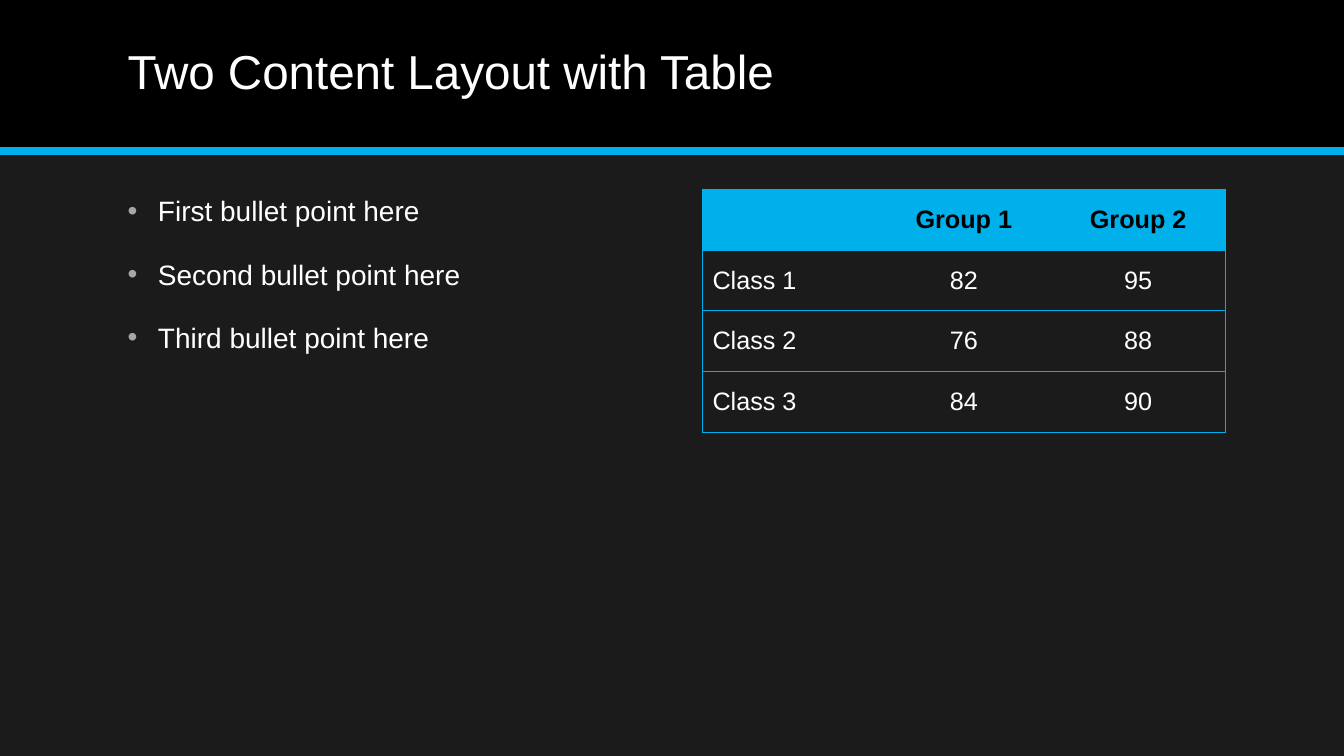
from pptx import Presentation
from pptx.dml.color import RGBColor
from pptx.enum.shapes import MSO_CONNECTOR, MSO_SHAPE
from pptx.enum.text import MSO_ANCHOR, MSO_AUTO_SIZE, PP_ALIGN
from pptx.oxml.ns import qn
from pptx.util import Pt
from lxml.etree import SubElement

EMU_PER_PX = 9525
WIDTH, HEIGHT = 1280, 720
BACKGROUND, BLACK, WHITE = "1B1B1B", "000000", "FFFFFF"
ACCENT, BULLET_GREY = "00B0EA", "A6A6A6"


def px(*lengths):
    return [length * EMU_PER_PX for length in lengths]


def color(hex_string):
    return RGBColor.from_string(hex_string)


class SlideBuilder:
    font_name = "Arial"

    def __init__(self, deck):
        self.slide = deck.slides.add_slide(deck.slide_layouts[5])
        self.shapes = self.slide.shapes
        fill = self.slide.background.fill
        fill.solid()
        fill.fore_color.rgb = color(BACKGROUND)

    def style(self, paragraph, size, hex_color, bold=False, **formats):
        font = {"name": self.font_name, "size": Pt(size), "bold": bold}
        for target, values in ((paragraph.font, font), (paragraph, formats)):
            for name, value in values.items():
                setattr(target, name, value)
        paragraph.font.color.rgb = color(hex_color)

    def band(self, left, top, width, height, hex_color):
        band = self.shapes.add_shape(MSO_SHAPE.RECTANGLE, *px(left, top, width, height))
        band.shadow.inherit = False
        band.fill.solid()
        band.fill.fore_color.rgb = color(hex_color)
        band.line.fill.background()

    def rule(self, x1, y1, x2, y2, hex_color, weight):
        rule = self.shapes.add_connector(MSO_CONNECTOR.STRAIGHT, *px(x1, y1, x2, y2))
        rule.line.color.rgb = color(hex_color)
        rule.line.width = Pt(weight)
        SubElement(rule._element.spPr, qn("a:effectLst"))

    def title(self, text, left, top, width, height):
        title = self.shapes.title
        title.left, title.top, title.width, title.height = px(left, top, width, height)
        frame = title.text_frame
        frame.text = text
        frame.vertical_anchor = MSO_ANCHOR.MIDDLE
        frame.auto_size = MSO_AUTO_SIZE.NONE
        self.style(frame.paragraphs[0], 34, WHITE,
                   alignment=PP_ALIGN.LEFT, line_spacing=0.9)
        # Bring the title in front of the header band
        self.shapes._spTree.append(title._element)

    def bullets(self, points, left, top, width, height):
        frame = self.shapes.add_textbox(*px(left, top, width, height)).text_frame
        frame.word_wrap = True
        frame.text = "\n".join(points)
        indent = px(29)[0]
        for paragraph in frame.paragraphs:
            self.style(paragraph, 20, WHITE, space_before=Pt(21))
            properties = paragraph._p.get_or_add_pPr()
            properties.set("marL", str(indent))
            properties.set("indent", str(-indent))
            # Bullet settings precede the default run properties
            bullet_color = SubElement(properties, qn("a:buClr"))
            SubElement(bullet_color, qn("a:srgbClr"), val=BULLET_GREY)
            bullet_font = SubElement(properties, qn("a:buFont"), typeface=self.font_name)
            bullet = SubElement(properties, qn("a:buChar"), char="•")
            defaults = properties.find(qn("a:defRPr"))
            for part in (bullet_color, bullet_font, bullet):
                defaults.addprevious(part)

    def border(self, cell, side, visible):
        edge = SubElement(cell._tc.get_or_add_tcPr(), qn(f"a:ln{side}"), w=str(Pt(0.5)))
        if visible:
            fill = SubElement(edge, qn("a:solidFill"))
            SubElement(fill, qn("a:srgbClr"), val=ACCENT)
        else:
            SubElement(edge, qn("a:noFill"))

    def table(self, rows, left, top, column_width, row_height):
        last = len(rows[0]) - 1
        size = px(column_width * len(rows[0]), row_height * len(rows))
        table = self.shapes.add_table(
            len(rows), len(rows[0]), *px(left, top), *size).table
        table.horz_banding = False
        for r, row in enumerate(rows):
            for c, text in enumerate(row):
                cell = table.cell(r, c)
                cell.text = text
                cell.vertical_anchor = MSO_ANCHOR.MIDDLE
                self.style(cell.text_frame.paragraphs[0], 18,
                           WHITE if r else BLACK, bold=r == 0,
                           alignment=PP_ALIGN.CENTER if c else PP_ALIGN.LEFT)
                # Outer frame and row rules only
                for side, visible in (("L", c == 0), ("R", c == last),
                                      ("T", True), ("B", True)):
                    self.border(cell, side, visible)
                if r:
                    cell.fill.background()
                else:
                    cell.fill.solid()
                    cell.fill.fore_color.rgb = color(ACCENT)


def main():
    deck = Presentation()
    deck.slide_width, deck.slide_height = px(WIDTH, HEIGHT)
    builder = SlideBuilder(deck)

    # Header
    builder.band(0, 0, WIDTH, 144, BLACK)
    builder.rule(0, 144, WIDTH, 144, ACCENT, 6)
    builder.title("Two Content Layout with Table", 112, 13, 1056, 115)

    # Left content
    builder.bullets(["First bullet point here", "Second bullet point here",
                     "Third bullet point here"], 112, 180, 499, 468)

    # Right content
    builder.table([["", "Group 1", "Group 2"],
                   ["Class 1", "82", "95"],
                   ["Class 2", "76", "88"],
                   ["Class 3", "84", "90"]], 669, 180, 166, 58)

    deck.save("out.pptx")


if __name__ == "__main__":
    main()
